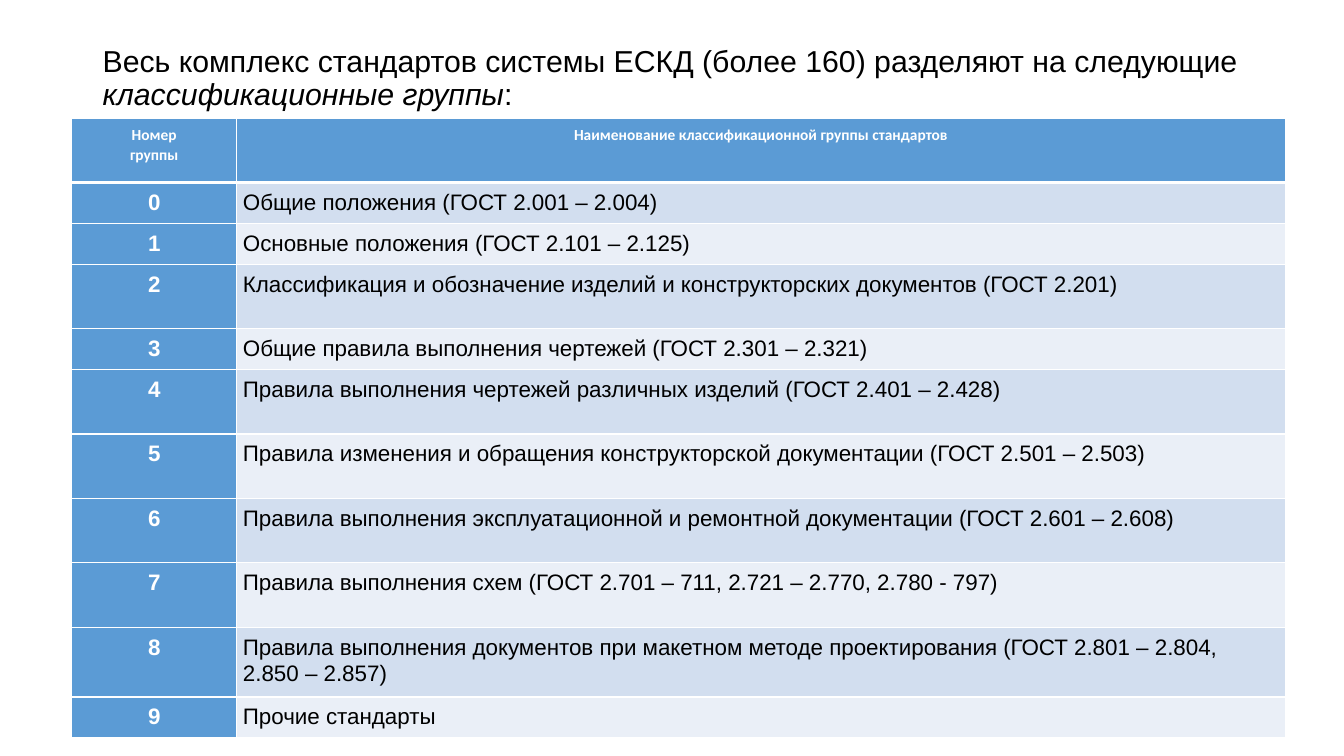
from lxml.etree import SubElement
from pptx import Presentation
from pptx.dml.color import RGBColor
from pptx.enum.text import MSO_ANCHOR, PP_ALIGN
from pptx.oxml.ns import qn
from pptx.util import Inches, Pt

BLUE, PALE_BLUE, PALEST_BLUE = "5B9BD5", "D2DEEF", "EAEFF7"
WHITE, BLACK = "FFFFFF", "000000"
TALL, SHORT = 0.64, 0.39
HEADER = (["Номер", "группы"], ["Наименование классификационной группы стандартов"])
GROUPS = [
    ("Общие положения (ГОСТ 2.001 – 2.004)", SHORT),
    ("Основные положения (ГОСТ 2.101 – 2.125)", SHORT),
    ("Классификация и обозначение изделий и конструкторских документов (ГОСТ 2.201)", TALL),
    ("Общие правила выполнения чертежей (ГОСТ 2.301 – 2.321)", SHORT),
    ("Правила выполнения чертежей различных изделий (ГОСТ 2.401 – 2.428)", TALL),
    ("Правила изменения и обращения конструкторской документации (ГОСТ 2.501 – 2.503)", TALL),
    ("Правила выполнения эксплуатационной и ремонтной документации (ГОСТ 2.601 – 2.608)", TALL),
    ("Правила выполнения схем (ГОСТ 2.701 – 711, 2.721 – 2.770, 2.780 - 797)", TALL),
    ("Правила выполнения документов при макетном методе проектирования "
     "(ГОСТ 2.801 – 2.804, 2.850 – 2.857)", TALL),
    ("Прочие стандарты", SHORT),
]


def color(hex_string):
    """Turn a hex string into a colour."""
    return RGBColor.from_string(hex_string)


def add_run(paragraph, text, size, hex_string, font="Arial", bold=False, italic=False):
    """Append one formatted run to a paragraph."""
    run = paragraph.add_run()
    run.text = text
    run.font.name = font
    run.font.size = Pt(size)
    run.font.bold = bold
    run.font.italic = italic
    run.font.color.rgb = color(hex_string)


def add_borders(cell, widths):
    """Draw white cell borders, with widths in points for left, right, top and bottom."""
    properties = cell._tc.get_or_add_tcPr()
    for side, width in zip("LRTB", widths):
        line = SubElement(properties, qn(f"a:ln{side}"), w=str(Pt(width)))
        SubElement(SubElement(line, qn("a:solidFill")), qn("a:srgbClr"), val=WHITE)


def fill_cell(cell, lines, fill, borders, centered=True, **style):
    """Write lines into a cell and set its fill, margins and borders."""
    add_borders(cell, borders)
    cell.fill.solid()
    cell.fill.fore_color.rgb = color(fill)
    cell.margin_left = cell.margin_right = Inches(0.06)
    cell.margin_top = cell.margin_bottom = Inches(0.06)
    frame = cell.text_frame
    for number, text in enumerate(lines):
        paragraph = frame.add_paragraph() if number else frame.paragraphs[0]
        paragraph.alignment = PP_ALIGN.CENTER if centered else PP_ALIGN.LEFT
        paragraph.line_spacing = 1.07
        add_run(paragraph, text, **style)


def add_title(slide, left, top, width, height):
    """Place the heading in the given box."""
    frame = slide.shapes.add_textbox(
        Inches(left), Inches(top), Inches(width), Inches(height)).text_frame
    frame.word_wrap = True
    frame.vertical_anchor = MSO_ANCHOR.MIDDLE
    heading = frame.paragraphs[0]
    heading.line_spacing = 0.9
    add_run(heading, "Весь комплекс стандартов системы ЕСКД (более 160) "
            "разделяют на следующие ", 21.6, BLACK)
    add_run(heading, "классификационные группы", 21.6, BLACK, italic=True)
    add_run(heading, ":", 21.6, BLACK)


def add_groups_table(slide, left, top, width, number_width):
    """Place the table of standard groups in the given box."""
    heights = [TALL] + [height for _, height in GROUPS]
    table = slide.shapes.add_table(
        len(heights), 2, Inches(left), Inches(top), Inches(width), Inches(sum(heights))).table
    table.columns[0].width = Inches(number_width)
    table.columns[1].width = Inches(width - number_width)
    for row, height in zip(table.rows, heights):
        row.height = Inches(height)
    for column, lines in enumerate(HEADER):
        fill_cell(table.cell(0, column), lines, BLUE, (1, 1, 1, 3),
                  size=11, hex_string=WHITE, font="Calibri", bold=True)
    for group, (name, _) in enumerate(GROUPS):
        borders = (1, 1, 1 if group else 3, 1)
        band = PALEST_BLUE if group % 2 else PALE_BLUE
        fill_cell(table.cell(group + 1, 0), [str(group)], BLUE, borders,
                  size=16, hex_string=WHITE, bold=True)
        fill_cell(table.cell(group + 1, 1), [name], band, borders, centered=False,
                  size=16, hex_string=BLACK)


def main():
    """Build the slide and save it."""
    presentation = Presentation()
    presentation.slide_width = Inches(13.33)
    presentation.slide_height = Inches(7.5)
    slide = presentation.slides.add_slide(presentation.slide_layouts[6])
    add_title(slide, 0.92, 0.4, 11.5, 0.77)
    add_groups_table(slide, 0.71, 1.17, 12.04, 1.64)
    presentation.save("out.pptx")


if __name__ == "__main__":
    main()
